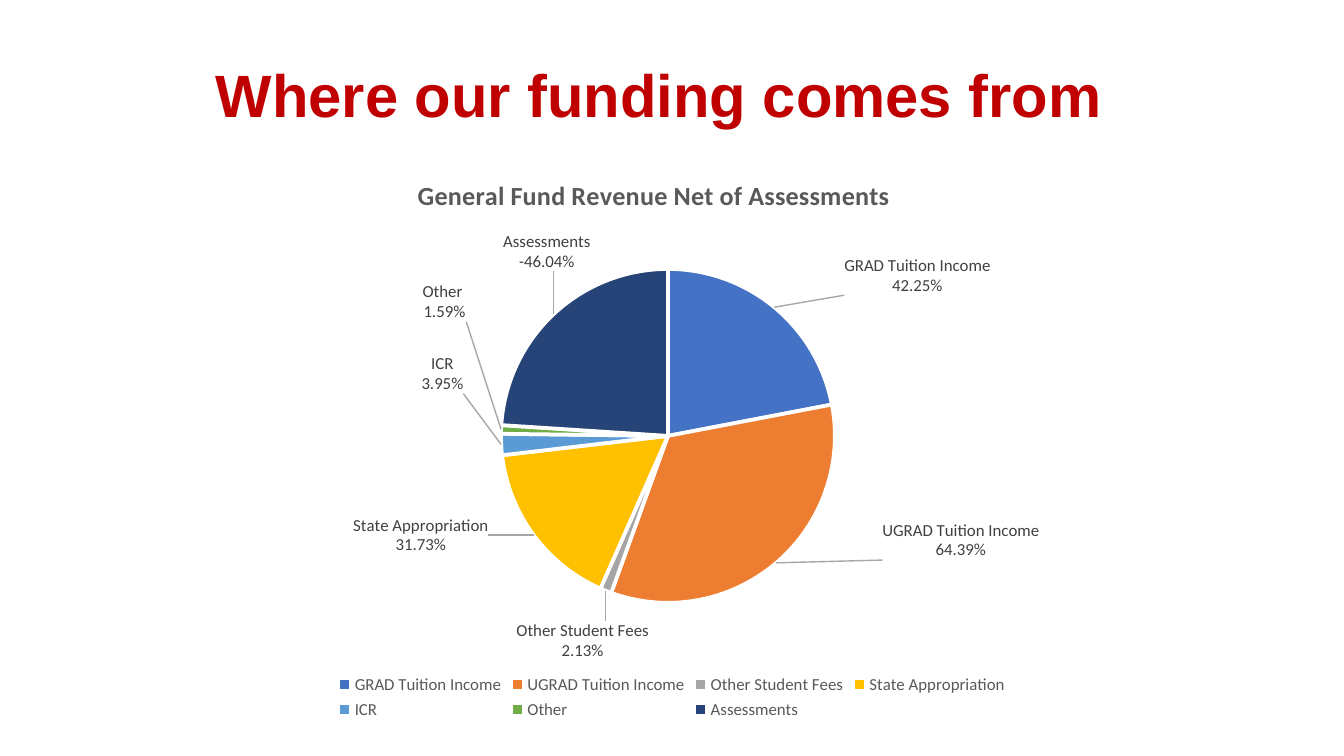
import lxml.etree
import pptx
import pptx.chart.data
import pptx.dml.color
import pptx.enum.chart
import pptx.enum.text
import pptx.oxml
import pptx.oxml.ns
import pptx.util

PX = 914400 / 134.4
INK = {"title": "C00000", "text": "595959", "label": "404040",
       "line": "A6A6A6", "edge": "FFFFFF", "base": "000000"}
PARTS = [
    ("GRAD Tuition Income", 0.4225, "4472C4", 65, -6),
    ("UGRAD Tuition Income", 0.6439, "ED7D31", 101, -48),
    ("Other Student Fees", 0.0213, "A5A5A5", 46, 23),
    ("State Appropriation", 0.3173, "FFC000", -39, -24),
    ("ICR", 0.0395, "5B9BD5", -30, -71),
    ("Other ", 0.0159, "70AD47", -27, -127),
    ("Assessments", -0.4604, "264478", 42, -37),
]
qn = pptx.oxml.ns.qn


def px(n):
    return pptx.util.Emu(round(n * PX))


def rgb(name):
    return pptx.dml.color.RGBColor.from_string(INK.get(name, name))


def style(font, size, color, face="Calibri", bold=False):
    font.size = pptx.util.Pt(size)
    font.color.rgb = rgb(color)
    font.name = face
    font.bold = bold


def write(frame, text, **form):
    frame.text = text
    style(frame.paragraphs[0].runs[0].font, **form)
    return frame.paragraphs[0]


def sub(node, tag, val=None):
    child = lxml.etree.SubElement(node, qn("c:" + tag))
    if val is not None:
        child.set("val", str(val))
    return child


def layout(values, inner=False):
    root = pptx.oxml.parse_xml(
        '<c:layout xmlns:c="http://schemas.openxmlformats.org/drawingml/2006/chart"/>')
    man = sub(root, "manualLayout")
    if inner:
        sub(man, "layoutTarget", "inner")
    if inner is not None:
        sub(man, "xMode", "edge")
        sub(man, "yMode", "edge")
    for key, val in zip("xywh", values):
        sub(man, key, round(val, 4))
    return root


def place(node, item, after):
    for old in node.findall(qn("c:layout")):
        node.remove(old)
    if after is None:
        node.insert(0, item)
    else:
        node.find(qn("c:" + after)).addnext(item)


def head(slide, x, y, w, h):
    box = slide.shapes.title
    box.left, box.top, box.width, box.height = map(px, (x, y, w, h))
    box.text_frame.vertical_anchor = pptx.enum.text.MSO_ANCHOR.MIDDLE
    para = write(box.text_frame, "Where our funding comes from",
                 size=32, color="title", face="Arial", bold=True)
    para.alignment = pptx.enum.text.PP_ALIGN.CENTER
    para.line_spacing = 0.9


def label(point, dx, dy, w, h):
    tag = point.data_label
    style(tag.font, 9, "label")
    tag.position = pptx.enum.chart.XL_LABEL_POSITION.BEST_FIT
    node = tag._dLbl
    place(node, layout((dx / w, dy / h), inner=None), "idx")
    node.find(qn("c:showCatName")).set("val", "1")
    sub(node, "separator").text = "\n"


def pie(slide, x, y, w, h):
    data = pptx.chart.data.CategoryChartData(number_format="0.00%")
    data.categories = [part[0] for part in PARTS]
    data.add_series("Series 1", [part[1] for part in PARTS])
    chart = slide.shapes.add_chart(
        pptx.enum.chart.XL_CHART_TYPE.PIE, *map(px, (x, y, w, h)), data).chart
    style(chart.font, 10, "base")
    write(chart.chart_title.text_frame, "General Fund Revenue Net of Assessments",
          size=14, color="text", bold=True)
    place(chart.chart_title._element, layout((320 / w, 11 / h)), "tx")
    chart.chart_title.include_in_layout = False
    chart.has_legend = True
    chart.legend.position = pptx.enum.chart.XL_LEGEND_POSITION.BOTTOM
    chart.legend.include_in_layout = False
    style(chart.legend.font, 9, "text")

    plot = chart.plots[0]
    plot.vary_by_categories = True
    area = plot._element.getparent()
    place(area, layout((408 / w, 108 / h, 334 / w, 334 / h), inner=True), None)
    series = plot.series[0]
    tags = series.data_labels
    style(tags.font, 9, "label")
    tags.number_format = "0.00%"
    tags.number_format_is_linked = False
    tags.show_value = tags.show_category_name = True
    tags.position = pptx.enum.chart.XL_LABEL_POSITION.BEST_FIT
    for old in tags._element.findall(qn("c:showLeaderLines")):
        tags._element.remove(old)
    sub(tags._element, "separator").text = "\n"
    sub(tags._element, "showLeaderLines", 1)
    lead = sub(sub(tags._element, "leaderLines"), "spPr")
    line = lxml.etree.SubElement(lead, qn("a:ln"), w="9525")
    fill = lxml.etree.SubElement(line, qn("a:solidFill"))
    lxml.etree.SubElement(fill, qn("a:srgbClr"), val=INK["line"])
    for i, (_, _, color, dx, dy) in enumerate(PARTS):
        point = series.points[i]
        point.format.fill.solid()
        point.format.fill.fore_color.rgb = rgb(color)
        point.format.line.color.rgb = rgb("edge")
        point.format.line.width = pptx.util.Pt(2)
        label(point, dx, dy, w, h)


def main():
    deck = pptx.Presentation()
    deck.slide_width, deck.slide_height = px(1344), px(756)
    slide = deck.slides.add_slide(deck.slide_layouts[5])
    head(slide, 66, 35, 1187, 126)
    pie(slide, 93, 161, 1158, 564)
    deck.save("out.pptx")


if __name__ == "__main__":
    main()
